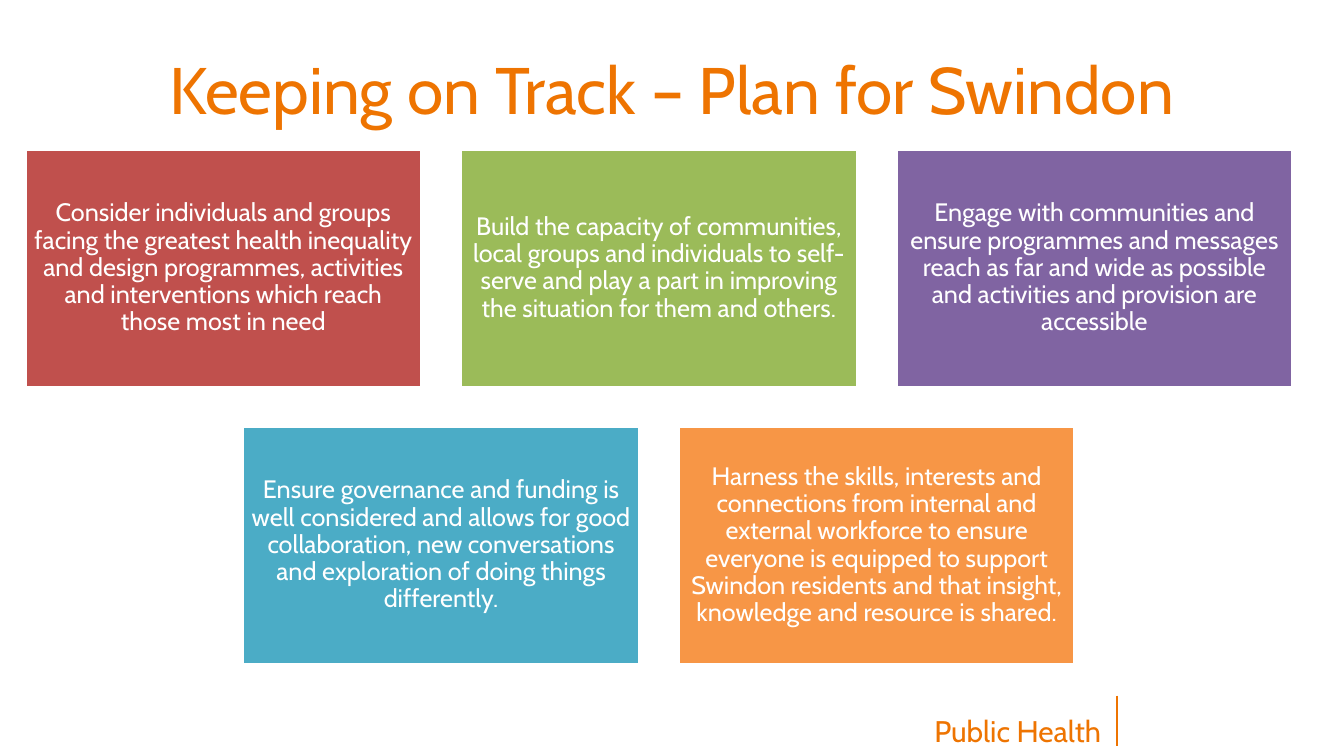
from dataclasses import dataclass

from lxml.etree import SubElement
from pptx import Presentation
from pptx.dml.color import RGBColor as RGB
from pptx.enum.shapes import MSO_CONNECTOR as CONN, MSO_SHAPE as SHAPE
from pptx.enum.text import MSO_ANCHOR as ANCHOR, MSO_AUTO_SIZE as AUTO, PP_ALIGN as ALIGN
from pptx.oxml.ns import qn
from pptx.util import Inches, Pt


@dataclass(frozen=True)
class Theme:
    font: str = "Cabin"
    accent: str = "EE7401"
    white: str = "FFFFFF"
    red: str = "C0504D"
    green: str = "9BBB59"
    purple: str = "8064A2"
    blue: str = "4BACC6"
    orange: str = "F79646"
    title_size: float = 47
    footer_size: float = 21.3
    card_size: float = 18


theme = Theme()


def write(sp, text, size, color, align, anchor, inset=0, spacing=1.0):
    tf = sp.text_frame
    tf.text = text
    tf.word_wrap = True
    tf.auto_size = AUTO.NONE
    tf.vertical_anchor = anchor
    tf.margin_left = tf.margin_right = tf.margin_top = tf.margin_bottom = Inches(inset)
    p = tf.paragraphs[0]
    p.alignment = align
    p.line_spacing = spacing
    font = p.runs[0].font
    font.name = theme.font
    font.size = Pt(size)
    font.color.rgb = RGB.from_string(color)


prs = Presentation()
prs.slide_width = Inches(13.33)
prs.slide_height = Inches(7.5)
slide = prs.slides.add_slide(prs.slide_layouts[5])
shapes = slide.shapes

title = shapes.title
title.left, title.top = Inches(0.89), Inches(0.2)
title.width, title.height = Inches(11.55), Inches(1.06)
write(title, "Keeping on Track – Plan for Swindon", theme.title_size,
      theme.accent, ALIGN.CENTER, ANCHOR.BOTTOM, spacing=0.8)

divider = shapes.add_connector(CONN.STRAIGHT, Inches(11.08), Inches(6.9),
                               Inches(11.08), Inches(7.4))
divider.line.color.rgb = RGB.from_string(theme.accent)
divider.line.width = Pt(1)
SubElement(divider.element.spPr, qn("a:effectLst"))

footer = shapes.add_textbox(Inches(1.47), Inches(7), Inches(9.45), Inches(0.5))
write(footer, "Public Health", theme.footer_size, theme.accent,
      ALIGN.RIGHT, ANCHOR.MIDDLE)

card_rows = [
    [
        (theme.red, "Consider individuals and groups facing the greatest health "
                    "inequality and design programmes, activities and interventions "
                    "which reach those most in need"),
        (theme.green, "Build the capacity of communities, local groups and individuals "
                      "to self-serve and play a part in improving the situation for "
                      "them and others."),
        (theme.purple, "Engage with communities and ensure programmes and messages reach "
                       "as far and wide as possible and activities and provision are "
                       "accessible"),
    ],
    [
        (theme.blue, "Ensure governance and funding is well considered and allows for "
                     "good collaboration, new conversations and exploration of doing "
                     "things differently."),
        (theme.orange, "Harness the skills, interests and connections from internal and "
                       "external workforce to ensure everyone is equipped to support "
                       "Swindon residents and that insight, knowledge and resource is "
                       "shared."),
    ],
]
card_w, card_h, gap = 3.93, 2.36, 0.39
grid_left, grid_top = 0.25, 1.48
pitch_x, pitch_y = card_w + gap, card_h + gap

for row, cards in enumerate(card_rows):
    row_left = grid_left + (len(card_rows[0]) - len(cards)) * pitch_x / 2
    for col, (color, text) in enumerate(cards):
        card = shapes.add_shape(SHAPE.RECTANGLE, Inches(row_left + col * pitch_x),
                                Inches(grid_top + row * pitch_y),
                                Inches(card_w), Inches(card_h))
        card.shadow.inherit = False
        card.fill.solid()
        card.fill.fore_color.rgb = RGB.from_string(color)
        card.line.color.rgb = RGB.from_string(theme.white)
        card.line.width = Pt(2)
        write(card, text, theme.card_size, theme.white,
              ALIGN.CENTER, ANCHOR.MIDDLE, inset=0.07, spacing=0.9)

prs.save("out.pptx")
